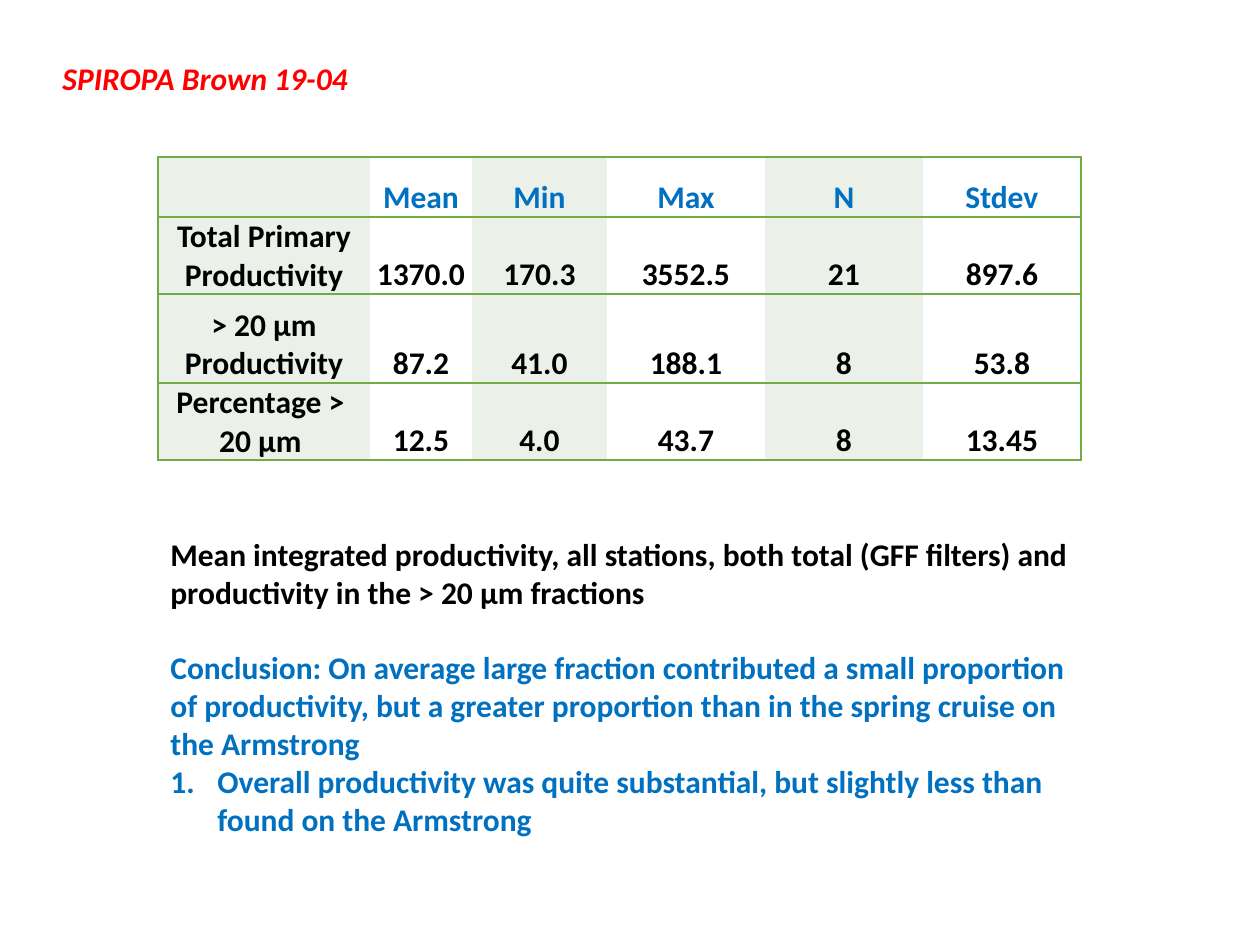
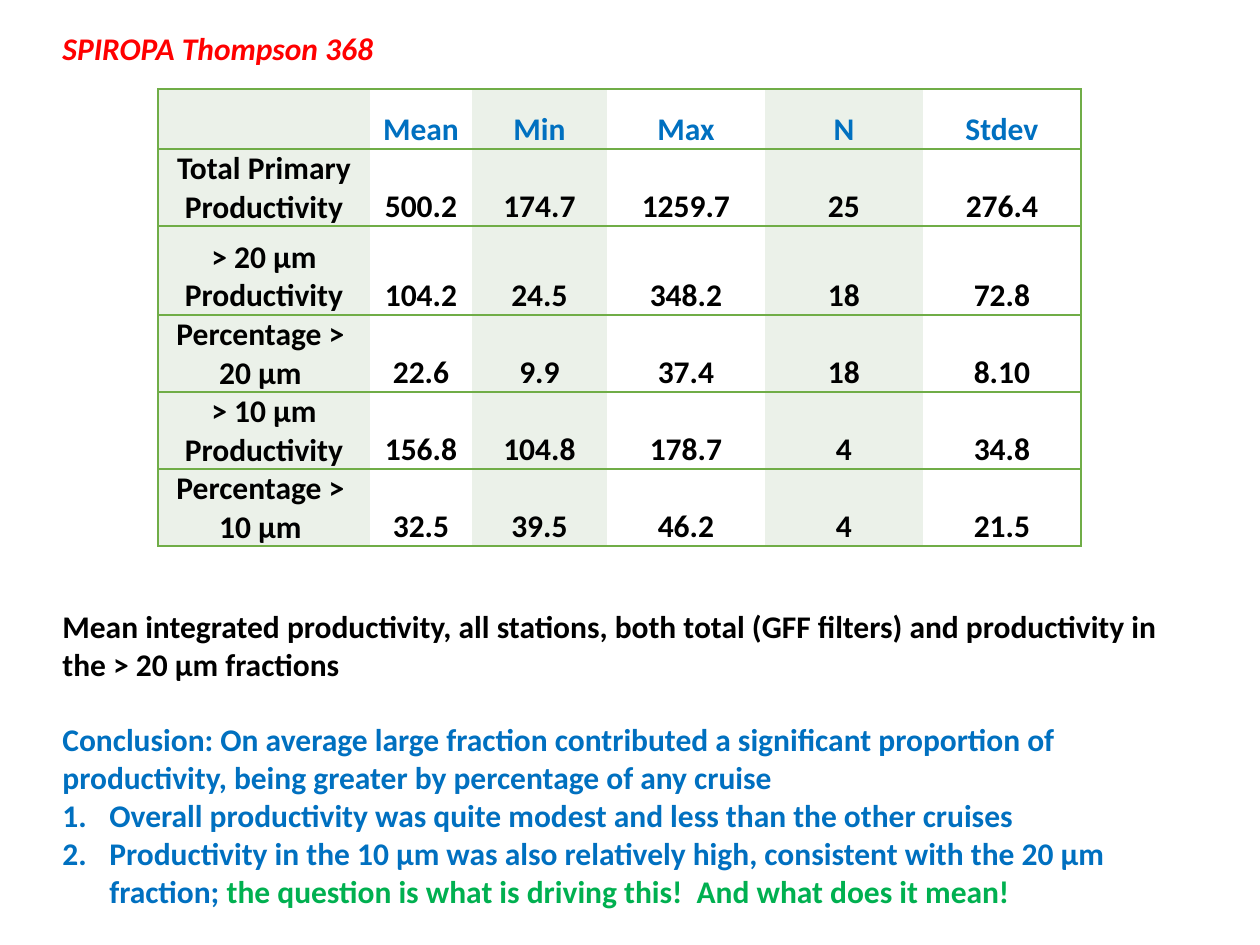
from lxml import etree
from pptx import Presentation, util as u
from pptx.dml.color import RGBColor
from pptx.enum import text as t
from pptx.oxml import ns

# Shared look
PX = 914400 / 126
FONT, SIZE = "Calibri", 18
RED, BLUE, BLACK, LEAF = "FF0000", "0070C0", "000000", "00B050"
GRID, SHADE, PLAIN = "70AD47", "EBF1E9", "FFFFFF"
NO_STYLE = "{2D5ABB26-0587-4C30-8999-92F81FD0307C}"
NUMBER_INDENT = 47
CONCLUSION_GAP = 21.5
TABLE_LEFT = 158
COLUMN_WIDTHS = [212, 102, 135, 158, 158, 158]
HEADER_HEIGHT, ROW_HEIGHT, TALL_ROW_HEIGHT = 60, 77, 89
TALL_ROW = 2

# Content
HEADER = ["", "Mean", "Min", "Max", "N", "Stdev"]
TOTAL = "Total Primary Productivity"
OVER_20, OVER_10 = "> 20 µm Productivity", "> 10 µm Productivity"
SHARE_20, SHARE_10 = "Percentage > \n20 µm ", "Percentage > \n10 µm "
CAPTION = ("Mean integrated productivity, all stations, both total (GFF filters) "
           "and productivity in the > 20 µm fractions")

CRUISES = [
    dict(
        title="SPIROPA Brown 19-04", title_top=53,
        table_top=157,
        rows=[
            [TOTAL, "1370.0", "170.3", "3552.5", "21", "897.6"],
            [OVER_20, "87.2", "41.0", "188.1", "8", "53.8"],
            [SHARE_20, "12.5", "4.0", "43.7", "8", "13.45"],
        ],
        notes_box=(158, 529, 923, 318),
        conclusion="Conclusion: On average large fraction contributed a small proportion "
                   "of productivity, but a greater proportion than in the spring cruise "
                   "on the Armstrong",
        findings=[
            [("Overall productivity was quite substantial, but slightly less than "
              "found on the Armstrong", BLUE)],
        ],
    ),
    dict(
        title="SPIROPA Thompson 368", title_top=23,
        table_top=89,
        rows=[
            [TOTAL, "500.2", "174.7", "1259.7", "25", "276.4"],
            [OVER_20, "104.2", "24.5", "348.2", "18", "72.8"],
            [SHARE_20, "22.6", "9.9", "37.4", "18", "8.10"],
            [OVER_10, "156.8", "104.8", "178.7", "4", "34.8"],
            [SHARE_10, "32.5", "39.5", "46.2", "4", "21.5"],
        ],
        notes_box=(50, 601, 1154, 318),
        conclusion="Conclusion: On average large fraction contributed a significant "
                   "proportion of productivity, being greater by percentage of any cruise",
        findings=[
            [("Overall productivity was quite modest and less than the other cruises", BLUE)],
            [("Productivity in the 10 µm was also relatively high, consistent with "
              "the 20 µm fraction; ", BLUE),
             ("the question is what is driving this!  And what does it mean!", LEAF)],
        ],
    ),
]


def px(length):
    return u.Emu(round(length * PX))


def rgb(value):
    return RGBColor.from_string(value)


def write(paragraph, words, color=BLACK, italic=False, align=None, before=0, numbered=False):
    """Append words to a paragraph in the shared bold face."""
    run = paragraph.add_run()
    run.text = words
    font = run.font
    font.name, font.size, font.bold, font.italic = FONT, u.Pt(SIZE), True, italic
    font.color.rgb = rgb(color)
    if align is not None:
        paragraph.alignment = align
    if before:
        paragraph.space_before = u.Pt(before)
    if numbered:
        props = paragraph._p.get_or_add_pPr()
        props.set("marL", str(px(NUMBER_INDENT)))
        props.set("indent", str(px(-NUMBER_INDENT)))
        if props.find(ns.qn("a:buAutoNum")) is None:
            etree.SubElement(props, ns.qn("a:buAutoNum"), type="arabicPeriod")


def add_box(slide, left, top, width, height):
    frame = slide.shapes.add_textbox(px(left), px(top), px(width), px(height)).text_frame
    frame.word_wrap = True
    frame.auto_size = t.MSO_AUTO_SIZE.SHAPE_TO_FIT_TEXT
    return frame


def set_borders(cell, sides):
    props = cell._tc.get_or_add_tcPr()
    for side in "LRTB":
        if side in sides:
            line = etree.SubElement(props, ns.qn(f"a:ln{side}"), w=str(u.Pt(1)))
            fill = etree.SubElement(line, ns.qn("a:solidFill"))
            etree.SubElement(fill, ns.qn("a:srgbClr"), val=GRID)


def fill_cell(cell, words, row, column):
    cell.margin_left = cell.margin_right = cell.margin_top = px(1)
    cell.margin_bottom = 0
    cell.vertical_anchor = t.MSO_ANCHOR.BOTTOM
    edges = {0: "L", len(HEADER) - 1: "R"}
    set_borders(cell, "TB" + edges.get(column, ""))
    cell.fill.solid()
    cell.fill.fore_color.rgb = rgb(PLAIN if column % 2 else SHADE)
    if not words:
        return
    frame = cell.text_frame
    for i, line in enumerate(words.split("\n")):
        paragraph = frame.add_paragraph() if i else frame.paragraphs[0]
        write(paragraph, line, color=BLACK if row else BLUE, align=t.PP_ALIGN.CENTER)


def add_statistics(slide, top, body):
    rows = [HEADER] + body
    heights = [HEADER_HEIGHT] + [ROW_HEIGHT] * len(body)
    heights[TALL_ROW] = TALL_ROW_HEIGHT
    table = slide.shapes.add_table(len(rows), len(HEADER), px(TABLE_LEFT), px(top),
                                   px(sum(COLUMN_WIDTHS)), px(sum(heights))).table
    table.first_row = table.horz_banding = False
    table._tbl.tblPr.find(ns.qn("a:tableStyleId")).text = NO_STYLE
    for column, width in zip(table.columns, COLUMN_WIDTHS):
        column.width = px(width)
    for r, (values, height) in enumerate(zip(rows, heights)):
        table.rows[r].height = px(height)
        for c, words in enumerate(values):
            fill_cell(table.cell(r, c), words, r, c)


def add_notes(slide, box, conclusion, findings):
    frame = add_box(slide, *box)
    write(frame.paragraphs[0], CAPTION)
    write(frame.add_paragraph(), conclusion, color=BLUE, before=CONCLUSION_GAP)
    for finding in findings:
        paragraph = frame.add_paragraph()
        for words, color in finding:
            write(paragraph, words, color=color, numbered=True)


def main():
    deck = Presentation()
    deck.slide_width, deck.slide_height = px(1260), px(945)
    for cruise in CRUISES:
        slide = deck.slides.add_slide(deck.slide_layouts[6])
        title = add_box(slide, 50, cruise["title_top"], 508, 50)
        write(title.paragraphs[0], cruise["title"], color=RED, italic=True)
        add_notes(slide, cruise["notes_box"], cruise["conclusion"], cruise["findings"])
        add_statistics(slide, cruise["table_top"], cruise["rows"])
    deck.save("out.pptx")


if __name__ == "__main__":
    main()
